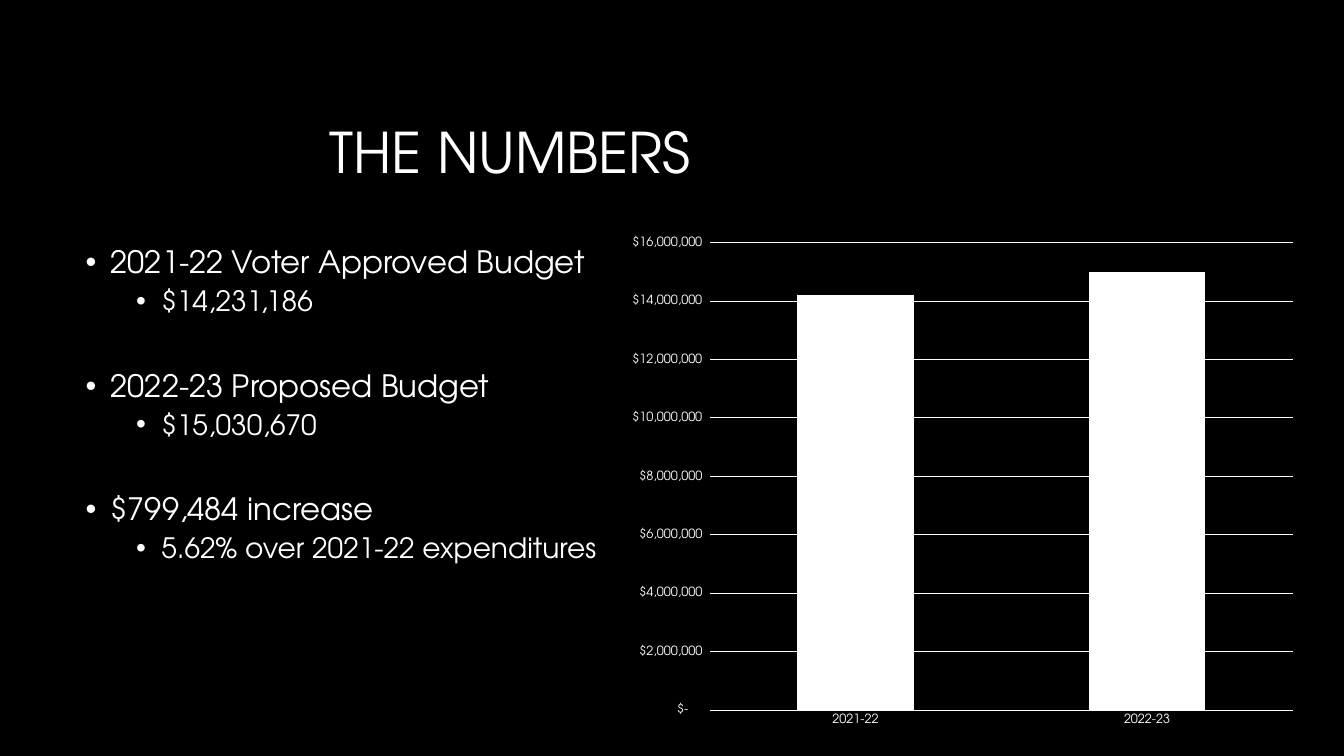
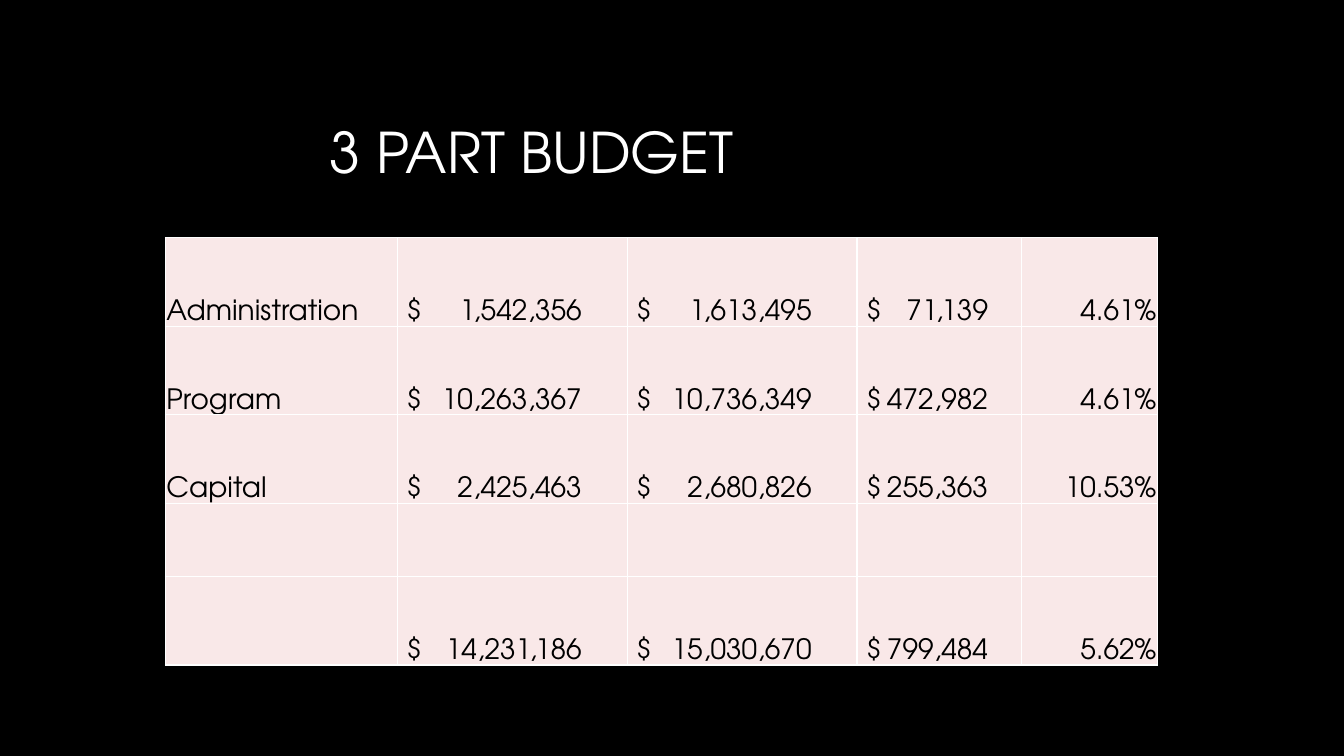
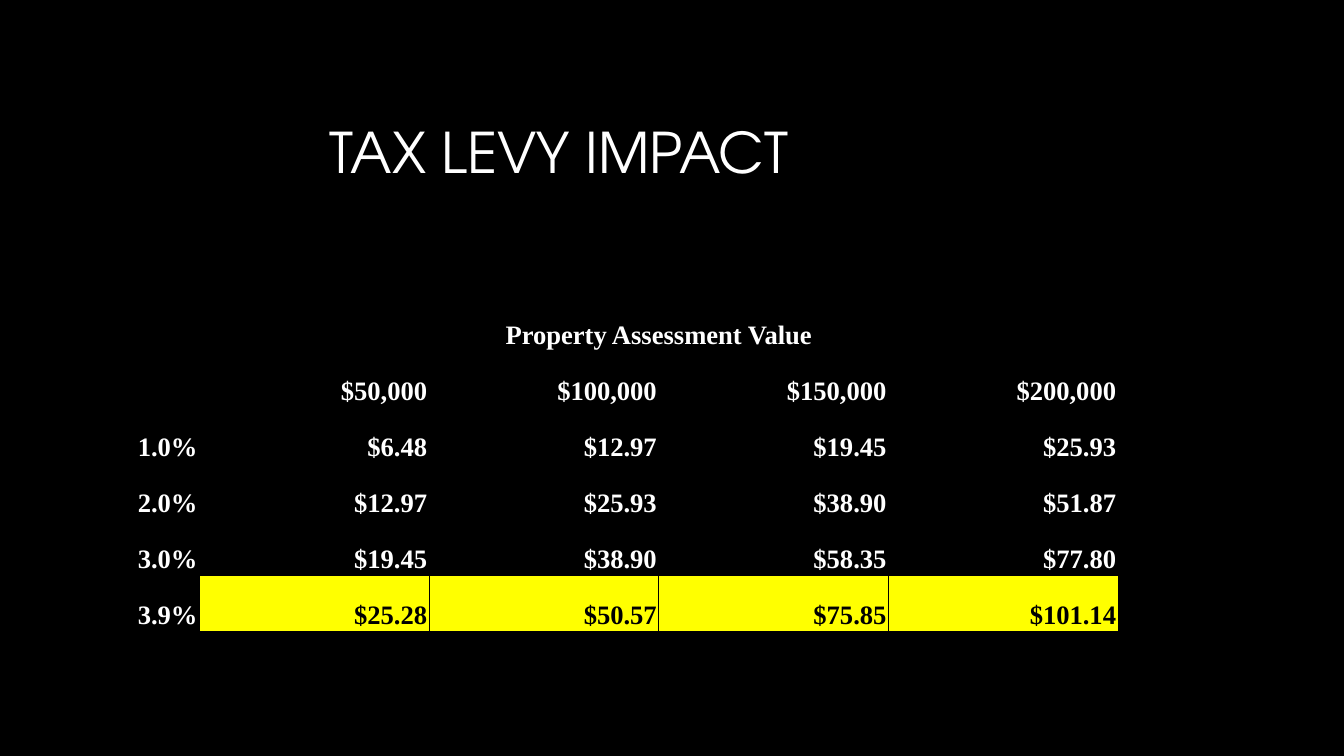
from dataclasses import dataclass

from lxml import etree
from pptx import Presentation
from pptx import util as u
from pptx.chart import data as chart_data
from pptx.dml.color import RGBColor
from pptx.enum import chart as chart_types
from pptx.enum import text
from pptx.oxml import ns

ALIGN = text.PP_ALIGN
ANCHOR = text.MSO_ANCHOR


@dataclass(frozen=True)
class Theme:
    black: str = "000000"
    white: str = "FFFFFF"
    blush: str = "F9E8E8"
    yellow: str = "FFFF00"
    sans: str = "TeX Gyre Adventor"
    serif: str = "Times New Roman"
    title: int = 40
    item: int = 22
    detail: int = 20
    levy: int = 19
    axis: int = 9
    line_spacing: float = 0.9


@dataclass(frozen=True)
class Box:
    left: float
    top: float
    width: float
    height: float

    def emu(self):
        return [u.Inches(n) for n in (self.left, self.top, self.width, self.height)]


THEME = Theme()
SLIDE_SIZE = (13.33, 7.5)
TITLE_BOX = Box(3.17, 0.84, 9.42, 1.41)
BODY_BOX = Box(0.75, 2.4, 11.83, 4.4)
TITLE_AND_BODY, TITLE_ONLY = 1, 5


def place(shape, box):
    shape.left, shape.top, shape.width, shape.height = box.emu()


def format_font(font, size, color=THEME.white, name=THEME.sans, bold=False):
    font.size, font.name, font.bold = u.Pt(size), name, bold
    font.color.rgb = RGBColor.from_string(color)


def write(paragraph, words, align=ALIGN.LEFT, spacing=None, before=0, **font):
    paragraph.alignment = align
    paragraph.line_spacing = spacing
    paragraph.space_before = u.Pt(before)
    run = paragraph.add_run()
    run.text = words
    format_font(run.font, **font)


def add_child(parent, tag, **attributes):
    return etree.SubElement(parent, ns.qn(tag), **attributes)


def set_up_master(presentation):
    master = presentation.slide_master
    master.background.fill.solid()
    master.background.fill.fore_color.rgb = RGBColor.from_string(THEME.black)
    for placeholder, box in zip(master.placeholders, (TITLE_BOX, BODY_BOX)):
        place(placeholder, box)


def add_titled_slide(presentation, title, layout=TITLE_ONLY):
    slide = presentation.slides.add_slide(presentation.slide_layouts[layout])
    place(slide.shapes.title, TITLE_BOX)
    frame = slide.shapes.title.text_frame
    frame.vertical_anchor = ANCHOR.MIDDLE
    write(frame.paragraphs[0], title, size=THEME.title, spacing=THEME.line_spacing)
    return slide


def set_bullet(paragraph, level):
    paragraph.level = level
    properties = paragraph._p.get_or_add_pPr()
    properties.set("marL", str(u.Inches(0.25 + 0.5 * level)))
    properties.set("indent", str(u.Inches(-0.25)))
    add_child(properties, "a:buFont", typeface="Arial")
    add_child(properties, "a:buChar", char="•")


def fill_body(placeholder, box, groups):
    """Write each (item, detail) pair as a bullet with a bullet below it."""
    place(placeholder, box)
    frame = placeholder.text_frame
    for index, (item, detail) in enumerate(groups):
        first = frame.add_paragraph() if index else frame.paragraphs[0]
        set_bullet(first, 0)
        write(first, item, size=THEME.item, spacing=THEME.line_spacing,
              before=38 if index else 0)
        second = frame.add_paragraph()
        set_bullet(second, 1)
        write(second, detail, size=THEME.detail, spacing=THEME.line_spacing, before=5)


def add_budget_chart(slide, box, budgets):
    source = chart_data.CategoryChartData()
    source.categories = list(budgets)
    source.add_series("Series 1", list(budgets.values()))
    chart = slide.shapes.add_chart(
        chart_types.XL_CHART_TYPE.COLUMN_STACKED, *box.emu(), source).chart
    chart.has_legend = chart.has_title = False
    format_font(chart.font, 10)

    plot = chart.plots[0]
    plot.gap_width, plot.overlap, plot.vary_by_categories = 150, 100, False
    bars = plot.series[0].format.fill
    bars.solid()
    bars.fore_color.rgb = RGBColor.from_string(THEME.white)

    for axis in (chart.category_axis, chart.value_axis):
        axis.major_tick_mark = axis.minor_tick_mark = chart_types.XL_TICK_MARK.NONE
        axis.format.line.fill.background()
        format_font(axis.tick_labels.font, THEME.axis)

    values = chart.value_axis
    values.minimum_scale, values.maximum_scale = 0, 16_000_000
    values.major_unit = 2_000_000
    values.tick_labels.number_format = (
        r'_("$"* #,##0_);_("$"* \(#,##0\);_("$"* "-"??_);_(@_)')
    values.tick_labels.number_format_is_linked = False
    grid = values.major_gridlines.format.line
    grid.width = u.Pt(0.75)
    grid.color.rgb = RGBColor.from_string(THEME.white)


def add_plain_table(slide, box, columns, rows):
    """Add an unbanded table whose columns and rows share the box by weight."""
    table = slide.shapes.add_table(len(rows), len(columns), *box.emu()).table
    table.first_row = table.horz_banding = False
    for column, weight in zip(table.columns, columns):
        column.width = u.Inches(box.width * weight / sum(columns))
    for row, weight in zip(table.rows, rows):
        row.height = u.Inches(box.height * weight / sum(rows))
    return table


def format_cell(cell, margins, border, border_width, fill=None):
    cell.vertical_anchor = ANCHOR.BOTTOM
    (cell.margin_left, cell.margin_top,
     cell.margin_right, cell.margin_bottom) = [u.Inches(n) for n in margins]
    properties = cell._tc.get_or_add_tcPr()
    for side in ("a:lnL", "a:lnR", "a:lnT", "a:lnB"):
        line = add_child(properties, side, w=str(u.Pt(border_width)))
        add_child(add_child(line, "a:solidFill"), "a:srgbClr", val=border)
    if fill:
        cell.fill.solid()
        cell.fill.fore_color.rgb = RGBColor.from_string(fill)
    else:
        cell.fill.background()


def add_tab_stop(paragraph, position):
    stops = add_child(paragraph._p.get_or_add_pPr(), "a:tabLst")
    add_child(stops, "a:tab", pos=str(u.Inches(position)), algn="r")


def add_budget_table(slide, box, records):
    """Add part, two budgets, increase and share; amounts align on a right tab."""
    tab_stops = {1: 1.74, 2: 1.74, 3: 1.21}
    table = add_plain_table(slide, box, (2.3, 2.28, 2.28, 1.63, 1.35),
                            (0.88, 0.88, 0.88, 0.73, 0.88))
    for r, record in enumerate(records):
        for c, words in enumerate(record):
            cell = table.cell(r, c)
            left = 0.09 if c in tab_stops else 0.01
            format_cell(cell, (left, 0.01, 0.01, 0), THEME.white, 1, THEME.blush)
            if not words:
                continue
            paragraph = cell.text_frame.paragraphs[0]
            if c in tab_stops:
                add_tab_stop(paragraph, tab_stops[c])
                words = f"$\t{words}"
            write(paragraph, words, size=THEME.detail, color=THEME.black,
                  align=ALIGN.RIGHT if c == 4 else ALIGN.LEFT)


def add_levy_table(slide, box, heading, records):
    """Add the levy grid under a merged heading, with its last row highlighted."""
    rows = [("", heading, "", "", ""), *records]
    table = add_plain_table(slide, box, (0.97, 2.28, 2.28, 2.28, 2.28), [1] * len(rows))
    table.cell(0, 1).merge(table.cell(0, 4))
    for r, row in enumerate(rows):
        for c, words in enumerate(row):
            marked = r == len(rows) - 1 and c > 0
            cell = table.cell(r, c)
            format_cell(cell, (0.02, 0.01, 0.02, 0.01), THEME.black, 0.5,
                        THEME.yellow if marked else None)
            if words:
                write(cell.text_frame.paragraphs[0], words, size=THEME.levy,
                      name=THEME.serif, bold=True,
                      color=THEME.black if marked else THEME.white,
                      align=ALIGN.RIGHT if r else ALIGN.CENTER)


def build_numbers_slide(presentation):
    slide = add_titled_slide(presentation, "THE NUMBERS", TITLE_AND_BODY)
    fill_body(slide.placeholders[1], BODY_BOX, [
        ("2021-22 Voter Approved Budget", "$14,231,186"),
        ("2022-23 Proposed Budget", "$15,030,670"),
        ("$799,484 increase", "5.62% over 2021-22 expenditures"),
    ])
    add_budget_chart(slide, Box(6.1, 2.25, 6.86, 5.05),
                     {"2021-22": 14_200_000, "2022-23": 15_000_000})


def build_parts_slide(presentation):
    slide = add_titled_slide(presentation, "3 PART BUDGET")
    add_budget_table(slide, Box(1.64, 2.36, 9.84, 4.24), [
        ("Administration", "1,542,356", "1,613,495", "71,139", "4.61%"),
        ("Program", "10,263,367", "10,736,349", "472,982", "4.61%"),
        ("Capital", "2,425,463", "2,680,826", "255,363", "10.53%"),
        ("", "", "", "", ""),
        ("", "14,231,186", "15,030,670", "799,484", "5.62%"),
    ])


def build_levy_slide(presentation):
    slide = add_titled_slide(presentation, "TAX LEVY IMPACT")
    add_levy_table(slide, Box(1.01, 2.93, 10.08, 3.33), "Property Assessment Value", [
        ("", "$50,000", "$100,000", "$150,000", "$200,000"),
        ("1.0%", "$6.48", "$12.97", "$19.45", "$25.93"),
        ("2.0%", "$12.97", "$25.93", "$38.90", "$51.87"),
        ("3.0%", "$19.45", "$38.90", "$58.35", "$77.80"),
        ("3.9%", "$25.28", "$50.57", "$75.85", "$101.14"),
    ])


def main():
    presentation = Presentation()
    presentation.slide_width, presentation.slide_height = map(u.Inches, SLIDE_SIZE)
    set_up_master(presentation)
    build_numbers_slide(presentation)
    build_parts_slide(presentation)
    build_levy_slide(presentation)
    presentation.save("out.pptx")


if __name__ == "__main__":
    main()
